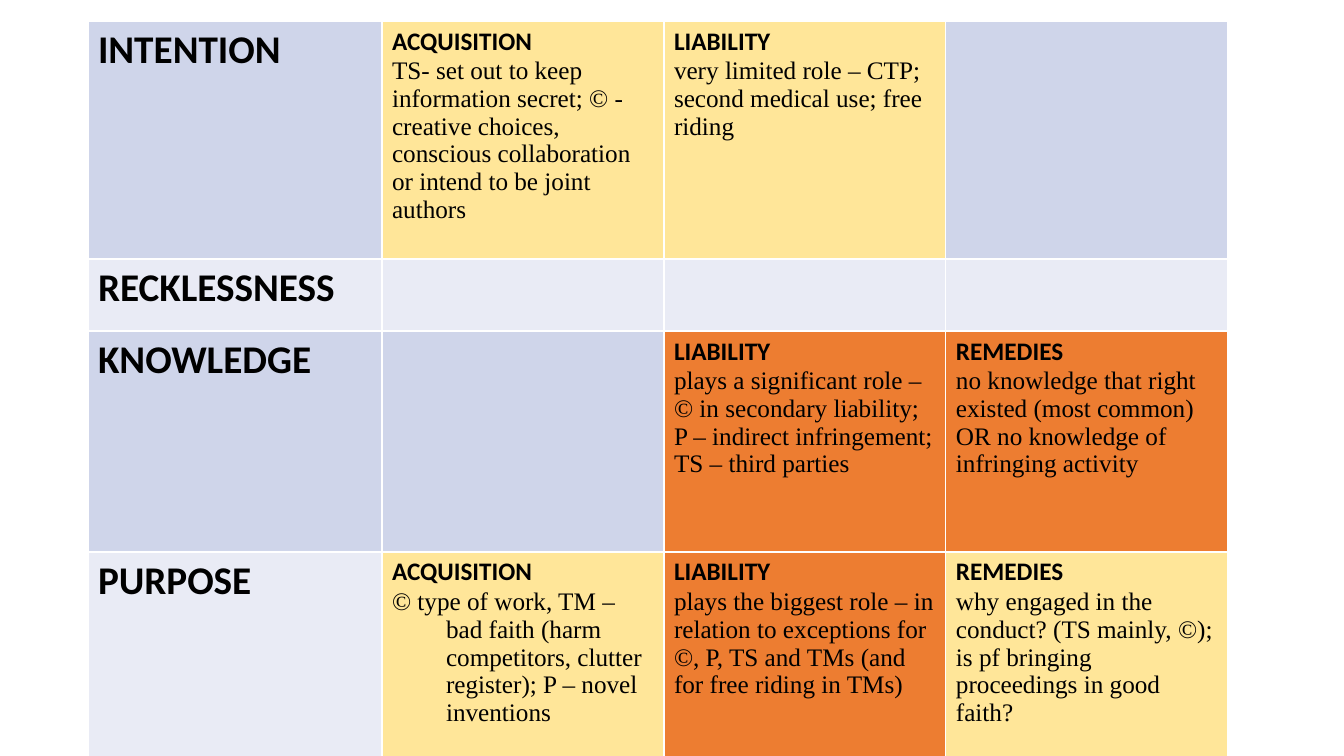
from lxml import etree
from pptx import Presentation
from pptx import util as u
from pptx.dml.color import RGBColor
from pptx.oxml import ns

PX = 12192000 / 1344
BLUE, PALE, GOLD, RUST = "CFD5EA", "E9EBF5", "FFE699", "ED7D31"
HEAD = {"name": "Calibri", "size": u.Pt(28), "bold": True}
LABEL = {"name": "Calibri", "size": u.Pt(18), "bold": True}
BODY = {"name": "Times New Roman", "size": u.Pt(18), "bold": False}

COLS = [294, 282, 282, 282]
# Each row: height, band colour, heading, then {column: (fill, label, body)}
ROWS = [
    (238, BLUE, "INTENTION", {
        1: (GOLD, "ACQUISITION", "TS- set out to keep information secret; © - creative choices, "
            "conscious collaboration or intend to be joint authors"),
        2: (GOLD, "LIABILITY", "very limited role – CTP; second medical use; free riding")}),
    (72, PALE, "RECKLESSNESS", {}),
    (221, BLUE, "KNOWLEDGE", {
        2: (RUST, "LIABILITY", "plays a significant role – © in secondary liability; "
            "P – indirect infringement; TS – third parties"),
        3: (RUST, "REMEDIES", "no knowledge that right existed (most common) "
            "OR no knowledge of infringing activity")}),
    (206, PALE, "PURPOSE", {
        1: (GOLD, "ACQUISITION", "© type of work, TM – bad faith (harm competitors, "
            "clutter register); P – novel inventions"),
        2: (RUST, "LIABILITY", "plays the biggest role – in relation to exceptions for "
            "©, P, TS and TMs (and for free riding in TMs)"),
        3: (GOLD, "REMEDIES", "why engaged in the conduct? (TS mainly, ©); "
            "is pf bringing proceedings in good faith?")}),
]
HANGING = (3, 1)


def px(n):
    return u.Emu(round(n * PX))


def rgb(code):
    return RGBColor.from_string(code)


class Deck:
    def __init__(self, ink="000000", rule="FFFFFF"):
        self.ink, self.rule = ink, rule
        self.prs = Presentation()
        self.prs.slide_width, self.prs.slide_height = px(1344), px(756)
        self.slide = self.prs.slides.add_slide(self.prs.slide_layouts[6])

    def table(self, left, top, cols, rows):
        frame = self.slide.shapes.add_table(
            len(rows), len(cols), px(left), px(top), px(sum(cols)), px(sum(rows)))
        grid = frame.table
        grid.first_row = grid.horz_banding = False
        for col, width in zip(grid.columns, cols):
            col.width = px(width)
        for row, height in zip(grid.rows, rows):
            row.height = px(height)
        return grid

    def cell(self, cell, fill, lines=()):
        """Fill and edge a cell, then write its (words, style) lines."""
        self.edge(cell)
        cell.fill.solid()
        cell.fill.fore_color.rgb = rgb(fill)
        frame = cell.text_frame
        for i, (words, style) in enumerate(lines):
            par = frame.add_paragraph() if i else frame.paragraphs[0]
            run = par.add_run()
            run.text = words
            run.font.color.rgb = rgb(self.ink)
            for key, value in style.items():
                setattr(run.font, key, value)

    def edge(self, cell):
        props = cell._tc.get_or_add_tcPr()
        for side in "LRTB":
            line = etree.SubElement(props, ns.qn("a:ln" + side), w=str(u.Pt(1)))
            fill = etree.SubElement(line, ns.qn("a:solidFill"))
            etree.SubElement(fill, ns.qn("a:srgbClr"), val=self.rule)

    def hang(self, par, depth):
        props = par._p.get_or_add_pPr()
        props.set("marL", str(px(depth)))
        props.set("indent", str(-px(depth)))


def main():
    deck = Deck()
    grid = deck.table(88, 21, COLS, [row[0] for row in ROWS])
    for r, (_, band, head, notes) in enumerate(ROWS):
        deck.cell(grid.cell(r, 0), band, [(head, HEAD)])
        for c in range(1, len(COLS)):
            if c in notes:
                fill, label, body = notes[c]
                deck.cell(grid.cell(r, c), fill, [(label, LABEL), (body, BODY)])
            else:
                deck.cell(grid.cell(r, c), band)
    deck.hang(grid.cell(*HANGING).text_frame.paragraphs[1], 54)
    deck.prs.save("out.pptx")


if __name__ == "__main__":
    main()
